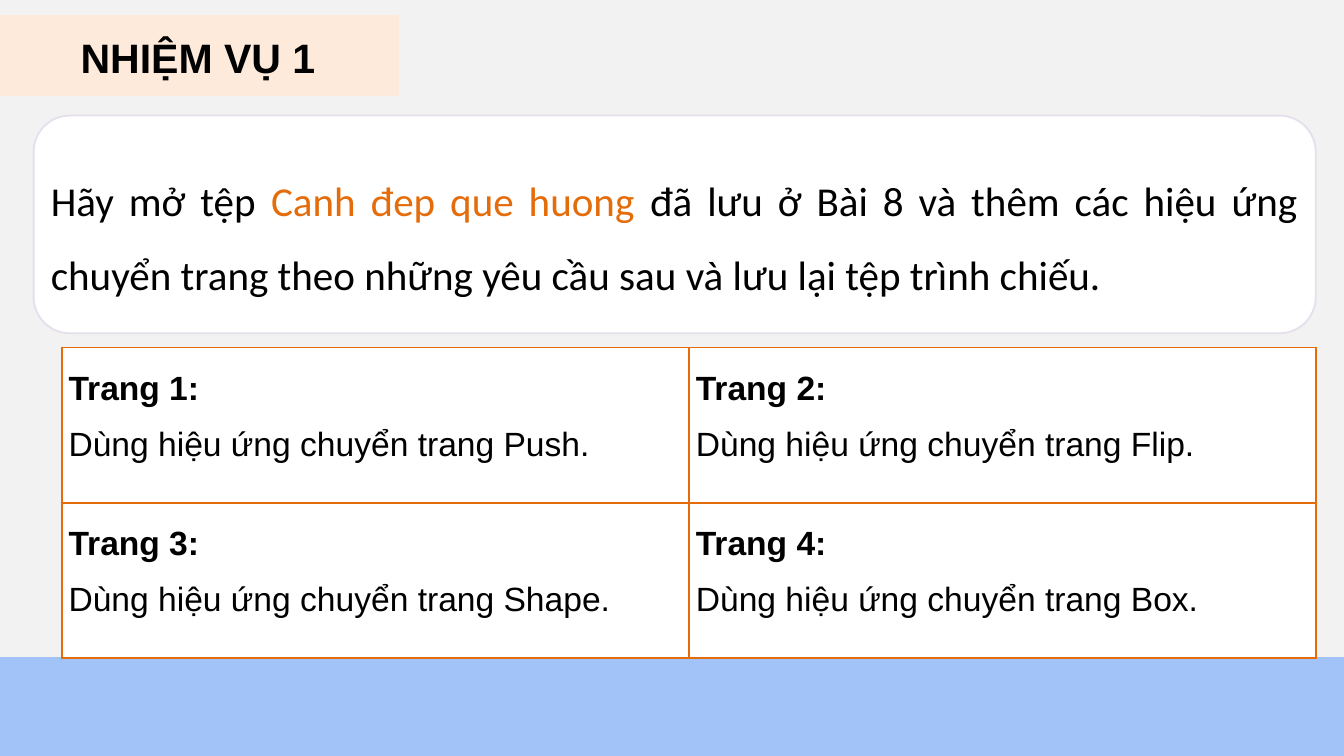
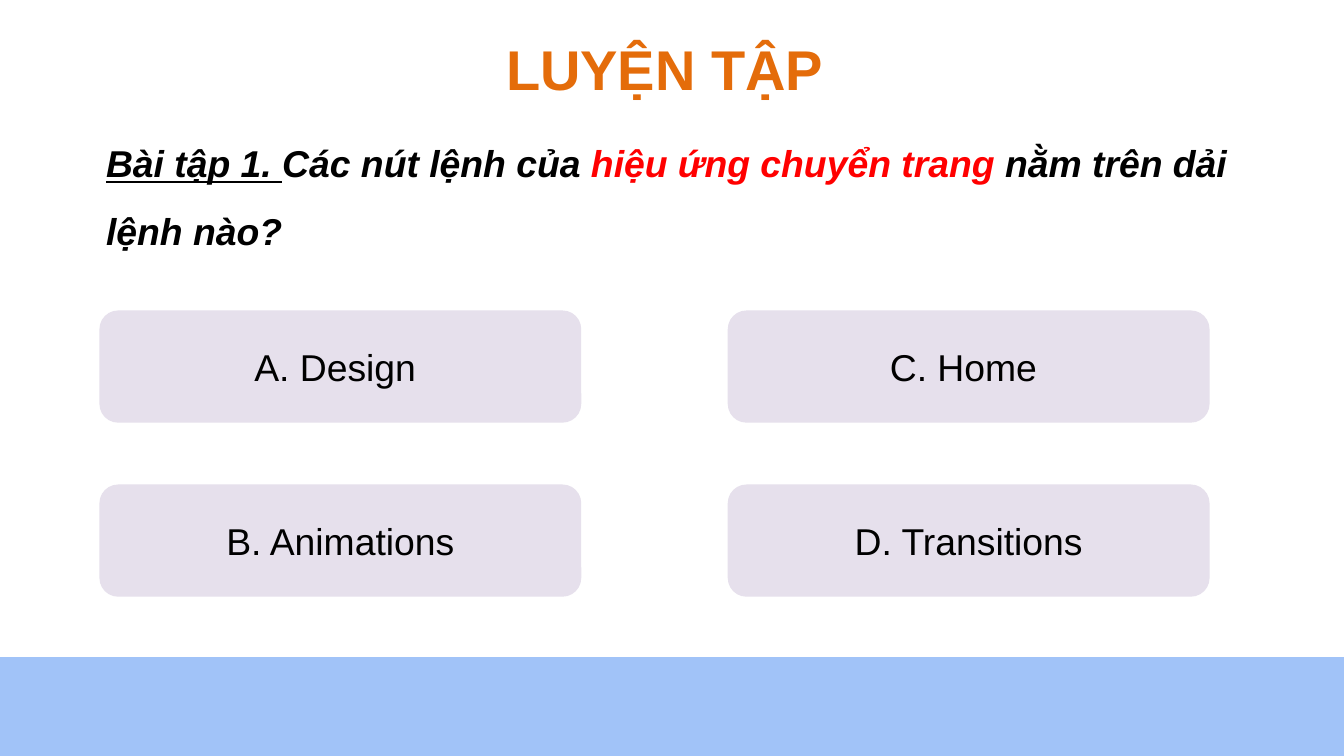
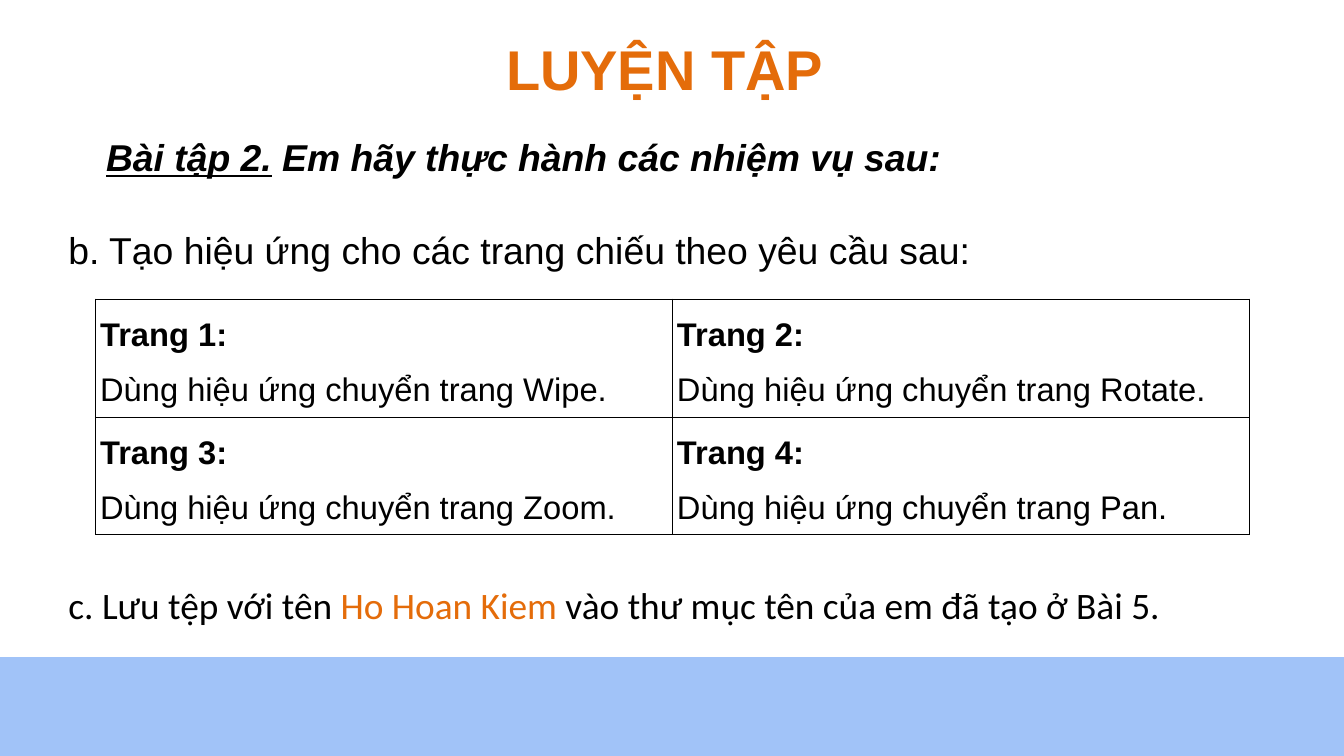
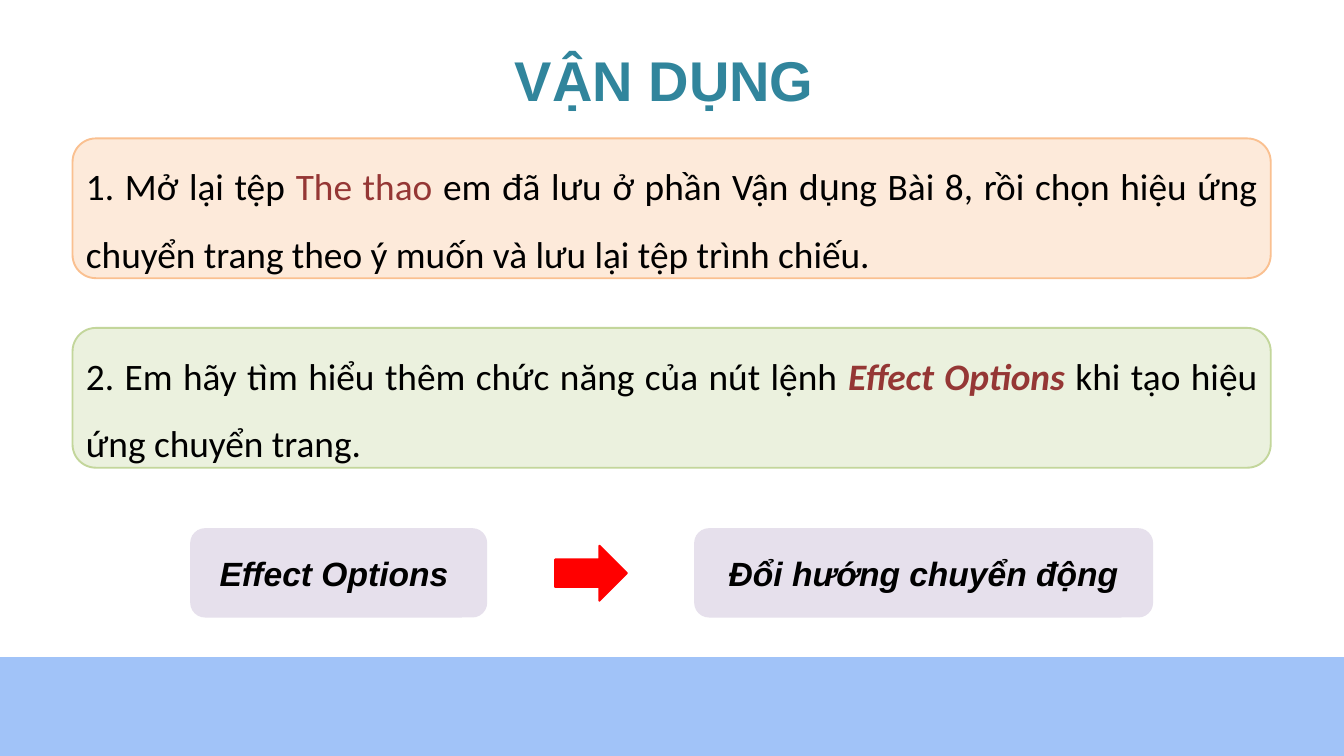
from lxml import etree
from pptx import Presentation
from pptx.dml.color import RGBColor
from pptx.enum.shapes import MSO_SHAPE
from pptx.enum.text import MSO_ANCHOR, MSO_AUTO_SIZE, PP_ALIGN
from pptx.oxml.ns import qn
from pptx.util import Inches, Pt

RECTANGLE = MSO_SHAPE.RECTANGLE
ROUNDED = MSO_SHAPE.ROUNDED_RECTANGLE
RIGHT_ARROW = MSO_SHAPE.RIGHT_ARROW
LEFT = PP_ALIGN.LEFT
CENTER = PP_ALIGN.CENTER
JUSTIFY = PP_ALIGN.JUSTIFY
MIDDLE = MSO_ANCHOR.MIDDLE
GROW = MSO_AUTO_SIZE.SHAPE_TO_FIT_TEXT

BLACK = "000000"
WHITE = "FFFFFF"
GRAY = "F2F2F2"
BLUE = "A1C3F8"
PEACH = "FDEADA"
LILAC = "E6E0EC"
ORANGE = "E46C0A"
TEAL = "31859C"
RED = "FF0000"
MAROON = "953735"

HEADING_FONT = "Arial"
BODY_FONT = "Calibri"


def rgb(color):
    return RGBColor.from_string(color)


def style_font(font, name=None, size=None, color=None, bold=None, italic=None, underline=None):
    """Set only the font properties that are given."""
    if name:
        font.name = name
    if size:
        font.size = Pt(size)
    if color:
        font.color.rgb = rgb(color)
    if bold is not None:
        font.bold = bold
    if italic is not None:
        font.italic = italic
    if underline is not None:
        font.underline = underline


def write_paragraph(paragraph, runs, align=LEFT, spacing=None, **style):
    """Write runs, each a string or a (string, font differences) pair."""
    paragraph.alignment = align
    if spacing:
        paragraph.line_spacing = spacing
    style_font(paragraph.font, **{"name": HEADING_FONT, "color": BLACK, **style})
    for item in runs:
        text, differences = (item, {}) if isinstance(item, str) else item
        run = paragraph.add_run()
        run.text = text
        style_font(run.font, **differences)


def add_text(slide, box, runs, **style):
    text_box = slide.shapes.add_textbox(*map(Inches, box))
    frame = text_box.text_frame
    frame.word_wrap = True
    frame.auto_size = GROW
    write_paragraph(frame.paragraphs[0], runs, **style)


def add_box(slide, kind, box, fill, line=None):
    shape = slide.shapes.add_shape(kind, *map(Inches, box))
    shape.shadow.inherit = False
    shape.fill.solid()
    shape.fill.fore_color.rgb = rgb(fill)
    if line:
        shape.line.color.rgb = rgb(line)
        shape.line.width = Pt(2)
    else:
        shape.line.fill.background()
    return shape


def add_card(slide, box, fill, runs, line=None, **style):
    """Add a rounded box with its text centred vertically."""
    frame = add_box(slide, ROUNDED, box, fill, line).text_frame
    frame.word_wrap = True
    frame.vertical_anchor = MIDDLE
    write_paragraph(frame.paragraphs[0], runs, **style)


def add_button(slide, box, text, **style):
    add_card(slide, box, LILAC, [text], align=CENTER, **style)


def set_borders(cell, color, width):
    properties = cell._tc.get_or_add_tcPr()
    for side in ("lnL", "lnR", "lnT", "lnB"):
        line = etree.SubElement(properties, qn(f"a:{side}"), w=str(Pt(width)))
        fill = etree.SubElement(line, qn("a:solidFill"))
        etree.SubElement(fill, qn("a:srgbClr"), val=color)


def add_effect_table(slide, box, effects, size, border, border_width, fill=None, compact=False):
    """Add a two-column table naming the transition effect of each page."""
    columns = 2
    rows = len(effects) // columns
    table = slide.shapes.add_table(rows, columns, *map(Inches, box)).table
    table.first_row = False
    table.horz_banding = False
    for index, effect in enumerate(effects):
        cell = table.cell(*divmod(index, columns))
        set_borders(cell, border, border_width)
        if fill:
            cell.fill.solid()
            cell.fill.fore_color.rgb = rgb(fill)
        else:
            cell.fill.background()
        if compact:
            cell.margin_left = cell.margin_right = Inches(0.07)
            cell.margin_top = cell.margin_bottom = 0
        frame = cell.text_frame
        write_paragraph(frame.paragraphs[0], [f"Trang {index + 1}:"],
                        spacing=1.5, size=size, bold=True)
        write_paragraph(frame.add_paragraph(), [f"Dùng hiệu ứng chuyển trang {effect}."],
                        spacing=1.5, size=size, bold=False)


def add_slide(presentation, background=WHITE):
    """Add a blank slide with the shared blue footer band."""
    slide = presentation.slides.add_slide(presentation.slide_layouts[6])
    slide.background.fill.solid()
    slide.background.fill.fore_color.rgb = rgb(background)
    add_box(slide, RECTANGLE, (-0.33, 9.79, 20.67, 1.82), BLUE, BLUE)
    return slide


def add_title(slide, text, color=ORANGE, top=0.46, left=5.29, width=9.42):
    add_text(slide, (left, top, width, 1.11), [text],
             align=CENTER, size=60, color=color, bold=True)


def add_exercise(slide, top, height, runs):
    add_text(slide, (1.48, top, 17.04, height), runs,
             spacing=1.5, size=40, bold=True, italic=True)


def build_task(presentation):
    slide = add_slide(presentation, GRAY)
    add_box(slide, RECTANGLE, (0, 0.23, 5.92, 1.19), PEACH, PEACH)
    add_text(slide, (1.1, 0.44, 3.71, 0.84), ["NHIỆM VỤ 1"], size=44, bold=True)
    add_card(slide, (0.5, 1.72, 19.08, 3.24), WHITE, [
        "Hãy mở tệp ",
        ("Canh đep que huong ", {"color": ORANGE}),
        "đã lưu ở Bài 8 và thêm các hiệu ứng chuyển trang theo những yêu cầu sau "
        "và lưu lại tệp trình chiếu.",
    ], line=LILAC, align=JUSTIFY, spacing=1.5, name=BODY_FONT, size=44)
    add_effect_table(slide, (0.92, 5.17, 18.67, 4.62), ["Push", "Flip", "Shape", "Box"],
                     36, ORANGE, 2.25, fill=WHITE)


def build_quiz(presentation):
    slide = add_slide(presentation)
    add_title(slide, "LUYỆN TẬP ")
    add_exercise(slide, 1.71, 2, [
        ("Bài tập 1. ", {"underline": True}),
        "Các nút lệnh của ",
        ("hiệu ứng chuyển trang ", {"color": RED}),
        "nằm trên dải lệnh nào?",
    ])
    answers = ["A. Design ", "B. Animations", "C. Home ", "D. Transitions"]
    for index, answer in enumerate(answers):
        column, row = divmod(index, 2)
        add_button(slide, (1.48 + 9.35 * column, 4.62 + 2.59 * row, 7.17, 1.67),
                   answer, size=40)


def build_practice(presentation):
    slide = add_slide(presentation)
    add_title(slide, "LUYỆN TẬP ")
    add_exercise(slide, 1.62, 0.99, [
        ("Bài tập 2.", {"underline": True}),
        " Em hãy thực hành các nhiệm vụ sau:",
    ])
    add_text(slide, (0.92, 3, 17.17, 0.99),
             ["b. Tạo hiệu ứng cho các trang chiếu theo yêu cầu sau:"],
             spacing=1.5, size=40)
    add_effect_table(slide, (1.42, 4.45, 17.17, 3.51), ["Wipe", "Rotate", "Zoom", "Pan"],
                     35, BLACK, 1, compact=True)
    add_text(slide, (0.92, 8.62, 18.52, 0.77), [
        "c. Lưu tệp với tên ",
        ("Ho Hoan Kiem ", {"color": ORANGE}),
        "vào thư mục tên của em đã tạo ở Bài 5.",
    ], name=BODY_FONT, size=40)


def build_application(presentation):
    slide = add_slide(presentation)
    add_title(slide, "VẬN DỤNG ", TEAL, top=0.63, left=5.75, width=8.5)
    tasks = [
        (PEACH, "FAC090", [
            "1. Mở lại tệp ",
            ("The thao ", {"color": MAROON}),
            "em đã lưu ở phần Vận d",
            ("ụ", {"name": HEADING_FONT}),
            "ng Bài 8, rồi chọn hiệu ứng chuyển trang theo ý muốn "
            "và lưu lại tệp trình chiếu.",
        ]),
        ("EBF1DE", "C3D69B", [
            "2. Em hãy tìm hiểu thêm chức năng của nút lệnh ",
            ("Effect Options ", {"color": MAROON, "bold": True, "italic": True}),
            "khi tạo hiệu ứng chuyển trang.",
        ]),
    ]
    for index, (fill, line, runs) in enumerate(tasks):
        add_card(slide, (1.08, 2.06 + 2.82 * index, 17.83, 2.08), fill, runs, line=line,
                 align=JUSTIFY, spacing=1.5, name=BODY_FONT, size=40)
    for left, width, text in [(2.83, 4.42, "Effect Options "),
                              (10.33, 6.83, "Đổi hướng chuyển động")]:
        add_button(slide, (left, 7.86, width, 1.33), text, size=36, bold=True, italic=True)
    add_box(slide, RIGHT_ARROW, (8.26, 8.12, 1.07, 0.82), RED, RED)


def main():
    presentation = Presentation()
    presentation.slide_width = Inches(20)
    presentation.slide_height = Inches(11.25)
    build_task(presentation)
    build_quiz(presentation)
    build_practice(presentation)
    build_application(presentation)
    presentation.save("out.pptx")


if __name__ == "__main__":
    main()
